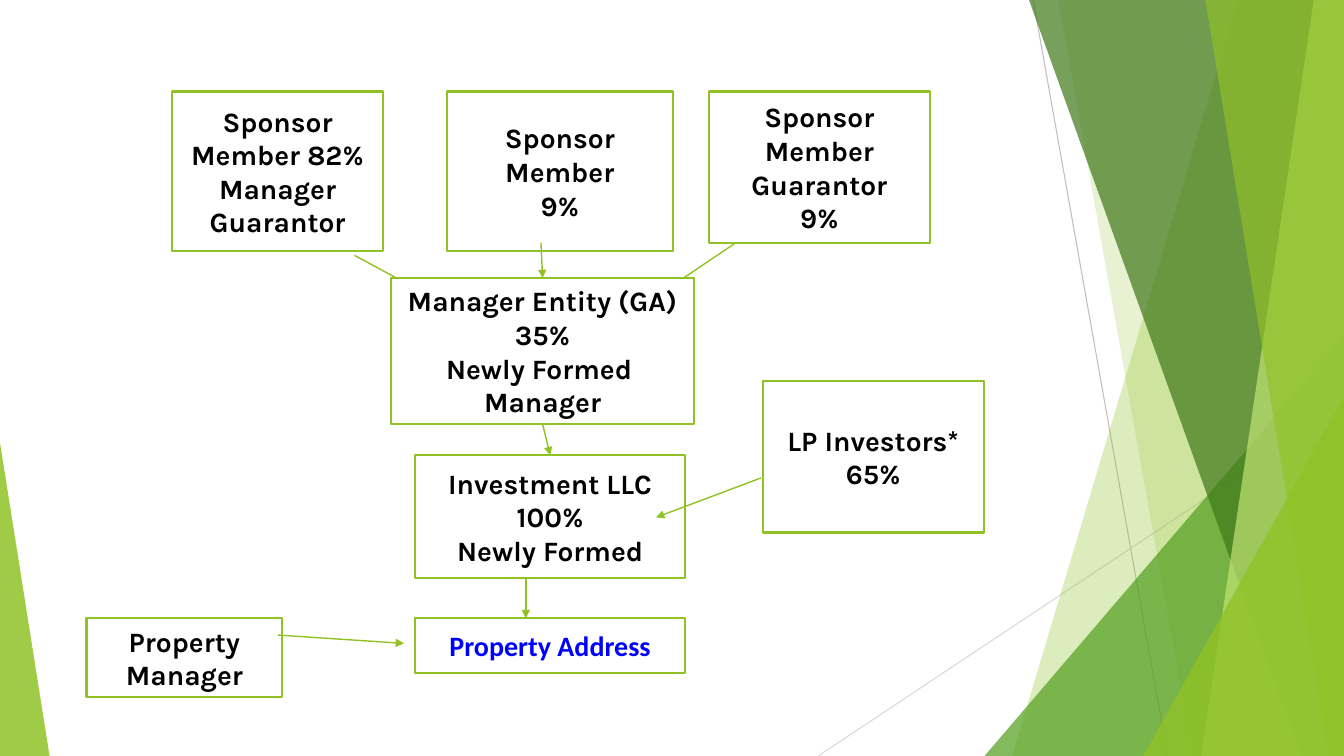
from pptx import Presentation
from pptx.dml.color import RGBColor
from pptx.enum.shapes import MSO_CONNECTOR, MSO_SHAPE
from pptx.enum.text import MSO_ANCHOR, PP_ALIGN
from pptx.oxml.ns import qn
from pptx.util import Inches, Pt
from lxml.etree import SubElement

COLUMNS, ROWS = 160, 90
WIDTH, HEIGHT = Inches(13.33), Inches(7.5)
TOP, BOTTOM = 0, 2  # connection sites


class Theme:
    green, leaf, forest, lime = "90C226", "54A021", "3F7819", "C0E474"
    paper, ink, link = "FFFFFF", "000000", "0000FF"
    line_gray, line_pale = "BFBFBF", "D9D9D9"
    font, link_font = "Karla", "Calibri"
    text_size = Pt(20)
    border, arrow, hairline = Pt(1.5), Pt(1), Pt(0.75)


def across(columns):
    return round(WIDTH * columns / COLUMNS)


def down(rows):
    return round(HEIGHT * rows / ROWS)


def place(left, top, width, height):
    return across(left), down(top), across(width), down(height)


def fill_solid(shape, color, opacity=100):
    shape.shadow.inherit = False
    shape.fill.solid()
    shape.fill.fore_color.rgb = RGBColor.from_string(color)
    if opacity < 100:
        color_node = shape._element.spPr.find(qn("a:solidFill"))[0]
        SubElement(color_node, qn("a:alpha"), val=str(opacity * 1000))


def add_band(page, top_left, bottom_left, color, opacity):
    """Draw a slanted band that reaches the right edge of the slide."""
    builder = page.shapes.build_freeform(across(top_left), 0)
    corners = [(COLUMNS, 0), (COLUMNS, ROWS), (bottom_left, ROWS)]
    builder.add_line_segments([(across(x), down(y)) for x, y in corners])
    band = builder.convert_to_shape()
    fill_solid(band, color, opacity)
    band.line.fill.background()


def add_triangle(page, left, top, width, apex, color, opacity):
    """Draw a triangle that stands on the bottom edge of the slide."""
    triangle = page.shapes.add_shape(
        MSO_SHAPE.ISOSCELES_TRIANGLE, *place(left, top, width, ROWS - top))
    triangle.adjustments[0] = apex
    fill_solid(triangle, color, opacity)
    triangle.line.fill.background()


def add_line(page, start, end, color, width):
    line = page.shapes.add_connector(
        MSO_CONNECTOR.STRAIGHT, across(start[0]), down(start[1]),
        across(end[0]), down(end[1]))
    line.line.color.rgb = RGBColor.from_string(color)
    line.line.width = width
    SubElement(line._element.spPr, qn("a:effectLst"))
    return line


def add_arrow(page, start, end):
    arrow = add_line(page, start, end, Theme.green, Theme.arrow)
    SubElement(arrow.line._get_or_add_ln(), qn("a:tailEnd"), type="triangle")
    return arrow


def add_entity(page, area, lines, font=Theme.font, color=Theme.ink):
    box = page.shapes.add_shape(MSO_SHAPE.RECTANGLE, *place(*area))
    fill_solid(box, Theme.paper)
    box.line.color.rgb = RGBColor.from_string(Theme.green)
    box.line.width = Theme.border
    frame = box.text_frame
    frame.word_wrap = True
    frame.vertical_anchor = MSO_ANCHOR.MIDDLE
    frame.text = "\n".join(lines)
    for para in frame.paragraphs:
        para.alignment = PP_ALIGN.CENTER
        for span in para.runs:
            span.font.name = font
            span.font.size = Theme.text_size
            span.font.bold = True
            span.font.color.rgb = RGBColor.from_string(color)
    return box


def add_backdrop(page):
    add_line(page, (123, 0), (139, ROWS), Theme.line_gray, Theme.hairline)
    add_line(page, (COLUMNS, 48.4), (97.4, ROWS), Theme.line_pale, Theme.hairline)
    add_band(page, 147.4, 120.5, Theme.green, 30)
    add_band(page, 126, 142, Theme.green, 20)
    add_triangle(page, 117.2, 40, 42.8, 1, Theme.leaf, 72)
    add_band(page, 122.5, 154.9, Theme.forest, 70)
    add_band(page, 156.4, 143, Theme.lime, 70)
    add_band(page, 143.5, 158.2, Theme.green, 65)
    add_triangle(page, 136.1, 47.2, 23.9, 1, Theme.green, 80)
    add_triangle(page, 0, 52.7, 5.9, 0, Theme.green, 85)


def add_structure(page):
    # Sponsors, whose outer arrows run behind the manager entity
    add_entity(page, (20.5, 10.9, 25.1, 19),
               ["Sponsor Member 82%", "Manager", "Guarantor"])
    add_entity(page, (53.2, 10.9, 26.9, 19), ["Sponsor Member", "9%"])
    add_entity(page, (84.4, 10.9, 26.3, 18),
               ["Sponsor Member", "Guarantor", "9%"])
    add_arrow(page, (42.2, 30.4), (53.5, 36.5))
    add_arrow(page, (87.6, 28.9), (73.8, 38.2))

    # Central chain of ownership
    manager = add_entity(page, (46.6, 33.1, 36, 17.4),
                         ["Manager Entity (GA)", "35%", "Newly Formed ", "Manager"])
    investment = add_entity(page, (49.4, 54.2, 32.2, 14.6),
                            ["Investment LLC", "100%", "Newly Formed"])
    add_entity(page, (49.4, 73.6, 32.2, 6.5), ["Property Address"],
               Theme.link_font, Theme.link)
    add_arrow(page, (62.6, 68.8), (62.6, 73.6))
    manager_to_investment = add_arrow(page, (64.6, 50.5), (65.5, 54.2))
    manager_to_investment.begin_connect(manager, BOTTOM)
    manager_to_investment.end_connect(investment, TOP)
    sponsor_to_manager = add_arrow(page, (64.4, 28.9), (64.6, 33.1))
    sponsor_to_manager.end_connect(manager, TOP)

    # Side parties
    add_entity(page, (90.8, 45.4, 26.3, 18), ["LP Investors*", "65%"])
    add_arrow(page, (90.6, 56.9), (78.1, 61.6))
    add_entity(page, (10.3, 73.6, 23.3, 9.4), ["Property Manager"])
    add_arrow(page, (33.1, 75.6), (48.1, 76.6))


def main():
    deck = Presentation()
    deck.slide_width, deck.slide_height = WIDTH, HEIGHT
    page = deck.slides.add_slide(deck.slide_layouts[6])
    add_backdrop(page)
    add_structure(page)
    deck.save("out.pptx")


if __name__ == "__main__":
    main()
